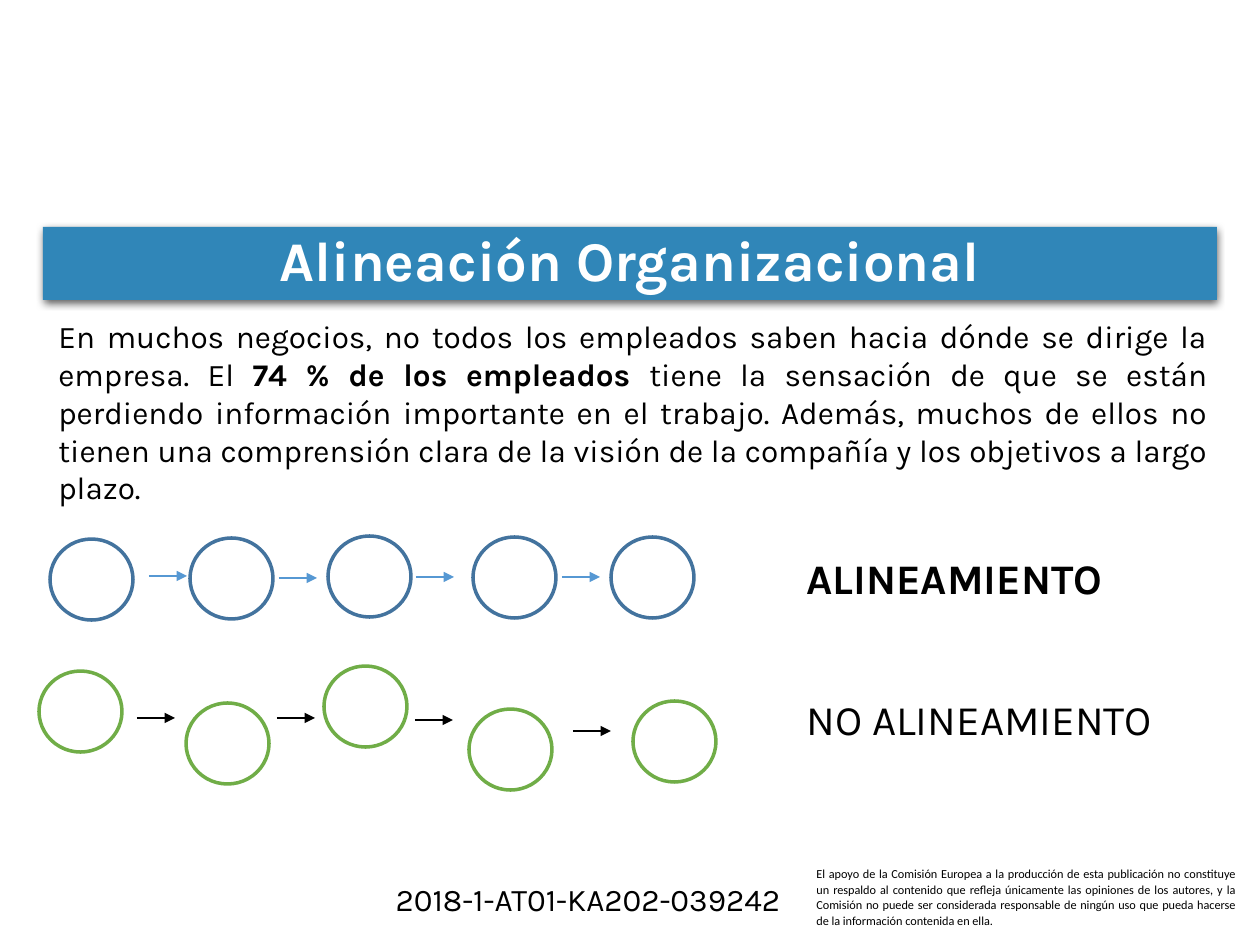
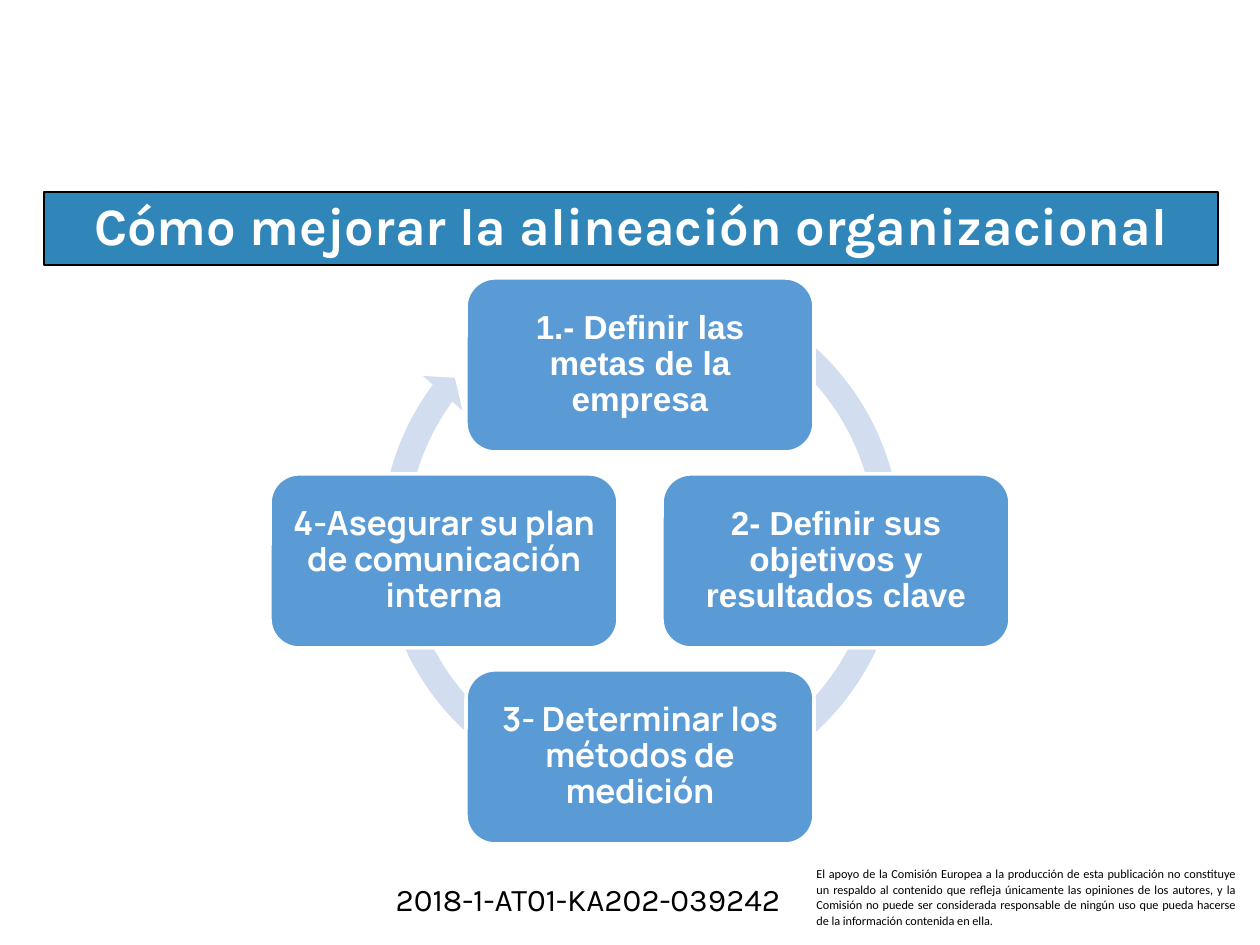
from math import cos, pi, sin

from lxml import etree
from pptx import Presentation
from pptx.dml.color import RGBColor
from pptx.enum.shapes import MSO_CONNECTOR, MSO_SHAPE
from pptx.enum.text import MSO_ANCHOR, PP_ALIGN
from pptx.oxml.ns import qn
from pptx.util import Emu, Pt

PX = 914400 / 126
RECT, OVAL = MSO_SHAPE.RECTANGLE, MSO_SHAPE.OVAL
ROUND, CYCLE_ARROW = MSO_SHAPE.ROUNDED_RECTANGLE, MSO_SHAPE.CIRCULAR_ARROW
STRAIGHT = MSO_CONNECTOR.STRAIGHT
TOP, MIDDLE = MSO_ANCHOR.TOP, MSO_ANCHOR.MIDDLE
LEFT, CENTER, JUSTIFY = PP_ALIGN.LEFT, PP_ALIGN.CENTER, PP_ALIGN.JUSTIFY

BLACK, WHITE = "000000", "FFFFFF"
BAND, RING_BLUE, ARROW_BLUE, GREEN = "3086B8", "43739E", "5698D3", "70AD47"
CARD, CYCLE = "5B9BD5", "D2DEEF"
BAND_SIZE = (1174, 73)
RING_W, RING_H, ARROW_LEN = 83, 81, 38
CARD_W, CARD_H, CARD_MARGIN = 348, 174, 10

PROJECT = "2018-1-AT01-KA202-039242"
DISCLAIMER = (
    "El apoyo de la Comisión Europea a la producción de esta publicación no "
    "constituye un respaldo al contenido que refleja únicamente las opiniones "
    "de los autores, y la Comisión no puede ser considerada responsable de "
    "ningún uso que pueda hacerse de la información contenida en ella."
)
INTRO = [
    ("En muchos negocios, no todos los empleados saben hacia dónde se dirige "
     "la empresa. El ", False),
    ("74 % de los empleados ", True),
    ("tiene la sensación de que se están perdiendo información importante en "
     "el trabajo. Además, muchos de ellos no tienen una comprensión clara de "
     "la visión de la compañía y los objetivos a largo plazo.", False),
]
ALIGNED = {
    "rings": [(0, 4), (140, 3), (278, 1), (423, 2), (561, 2)],
    "arrows": [(99, 41), (229, 43), (366, 42), (512, 42)],
}
UNALIGNED = {
    "rings": [(0, 5), (147, 37), (285, 0), (430, 43), (594, 35)],
    "arrows": [(98, 52), (238, 52), (376, 54), (534, 65)],
}
STEPS = [
    ("1.- Definir las metas de la empresa", "Arial"),
    ("2- Definir sus objetivos y resultados clave", "Arial"),
    ("3- Determinar los métodos de medición", "Manrope"),
    ("4-Asegurar su plan de comunicación interna", "Manrope"),
]


def px(*values):
    return [Emu(round(v * PX)) for v in values]


def rgb(value):
    return RGBColor.from_string(value)


def set_line(line, color, width):
    line.color.rgb = rgb(color)
    line.width = Pt(width)


def add_shape(slide, kind, box, fill=None, line=None):
    s = slide.shapes.add_shape(kind, *px(*box))
    s.shadow.inherit = False
    if fill:
        s.fill.solid()
        s.fill.fore_color.rgb = rgb(fill)
    else:
        s.fill.background()
    if line:
        set_line(s.line, *line)
    else:
        s.line.fill.background()
    return s


def write(s, runs, size, font="Karla", color=BLACK, align=LEFT, anchor=TOP, spacing=1.0):
    tf = s.text_frame
    tf.word_wrap = True
    tf.vertical_anchor = anchor
    p = tf.paragraphs[0]
    for name, value in {"alignment": align, "line_spacing": spacing}.items():
        setattr(p, name, value)
    for text, bold in runs:
        r = p.add_run()
        r.text = text
        for name, value in {"name": font, "size": Pt(size), "bold": bold}.items():
            setattr(r.font, name, value)
        r.font.color.rgb = rgb(color)


def add_text(slide, box, runs, size, **style):
    write(slide.shapes.add_textbox(*px(*box)), runs, size, **style)


def add_arrow(slide, x, y, color):
    c = slide.shapes.add_connector(STRAIGHT, *px(x, y, x + ARROW_LEN, y))
    set_line(c.line, color, 0.75)
    etree.SubElement(c.line._get_or_add_ln(), qn("a:tailEnd"), type="triangle")
    etree.SubElement(c._element.spPr, qn("a:effectLst"))


def add_shadow(s):
    effects = s._element.spPr.find(qn("a:effectLst"))
    shadow = etree.SubElement(
        effects, qn("a:outerShdw"), blurRad=str(Pt(4.5)), dist=str(Pt(1.5)),
        dir="5400000", algn="ctr", rotWithShape="0")
    color = etree.SubElement(shadow, qn("a:srgbClr"), val=BLACK)
    etree.SubElement(color, qn("a:alpha"), val="63000")


def add_title(slide, x, y, text, size, line=None):
    s = add_shape(slide, RECT, (x, y, *BAND_SIZE), BAND, line)
    write(s, [(text, True)], size, color=WHITE, align=CENTER, anchor=MIDDLE, spacing=0.9)
    return s


def add_footer(slide, x, y):
    add_text(slide, (x + 422, y, 444, 92), [(DISCLAIMER, False)], 7,
             font="Calibri", align=JUSTIFY, spacing=1.07)
    add_text(slide, (x, y + 15, 412, 50), [(PROJECT, False)], 18, align=CENTER)


def add_chain(slide, x, y, chain, ring_color, arrow_color):
    for dx, dy in chain["rings"]:
        add_shape(slide, OVAL, (x + dx, y + dy, RING_W, RING_H), line=(ring_color, 2))
    for dx, dy in chain["arrows"]:
        add_arrow(slide, x + dx, y + dy, arrow_color)


def add_cycle(slide, x, y):
    arrow = add_shape(slide, CYCLE_ARROW, (x + 97, y, 546, 546), CYCLE)
    for i, percent in enumerate([4.7, 272.9, 12990.4, 17923.4, 4.8]):
        arrow.adjustments[i] = percent / 100
    cx, cy, radius = x + 369, y + 294, 196
    for i, (text, font) in enumerate(STEPS):
        angle = 2 * pi * i / len(STEPS)
        left = cx + radius * sin(angle) - CARD_W / 2
        top = cy - radius * cos(angle) - CARD_H / 2
        s = add_shape(slide, ROUND, (left, top, CARD_W, CARD_H), CARD, (WHITE, 2))
        for side in ("left", "right", "top", "bottom"):
            setattr(s.text_frame, f"margin_{side}", px(CARD_MARGIN)[0])
        write(s, [(text, True)], 19, font, WHITE, CENTER, MIDDLE, 0.9)


def build_alignment(slide):
    add_shadow(add_title(slide, 43, 227, "Alineación Organizacional", 32))
    add_text(slide, (46, 311, 1174, 204), INTRO, 18, align=JUSTIFY)
    add_chain(slide, 50, 535, ALIGNED, RING_BLUE, ARROW_BLUE)
    add_text(slide, (794, 546, 367, 63), [("ALINEAMIENTO", True)], 24)
    add_chain(slide, 39, 666, UNALIGNED, GREEN, BLACK)
    add_text(slide, (794, 687, 420, 63), [("NO ALINEAMIENTO", False)], 24)


def build_improvement(slide):
    add_title(slide, 44, 192, "Cómo mejorar la alineación organizacional", 30, (BLACK, 0.75))
    add_cycle(slide, 271, 267)


def main():
    prs = Presentation()
    prs.slide_width, prs.slide_height = px(1260, 945)
    for build in (build_alignment, build_improvement):
        slide = prs.slides.add_slide(prs.slide_layouts[6])
        add_footer(slide, 382, 859)
        build(slide)
    prs.save("out.pptx")


if __name__ == "__main__":
    main()
